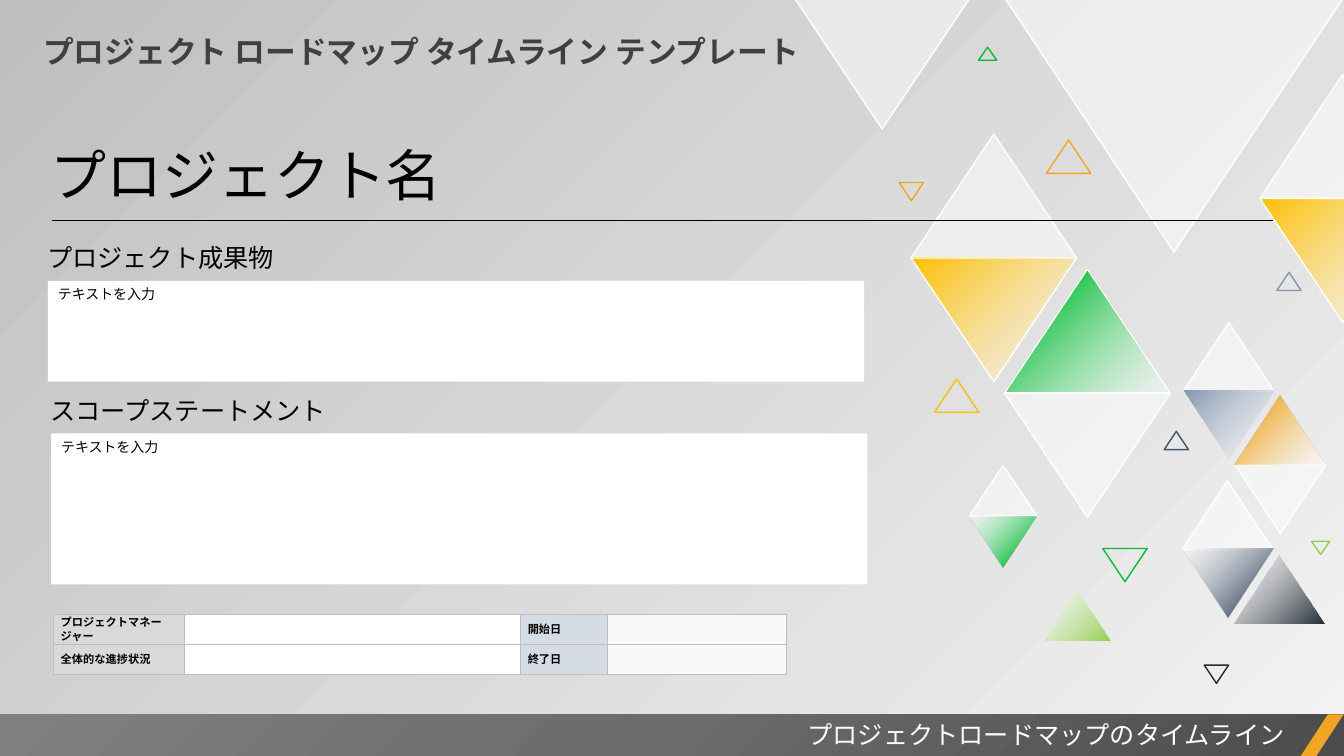
from dataclasses import dataclass

from pptx import Presentation
from pptx.dml.color import RGBColor as RGB
from pptx.enum.shapes import MSO_CONNECTOR as LINE, MSO_SHAPE as SHAPE
from pptx.enum.text import MSO_ANCHOR as ANCHOR, PP_ALIGN as ALIGN
from pptx.oxml import parse_xml
from pptx.oxml.ns import nsdecls, qn
from pptx.util import Cm, Pt


@dataclass(frozen=True)
class Theme:
    font: str = "TeX Gyre Adventor"
    white: str = "FFFFFF"
    black: str = "000000"
    heading: str = "404040"
    border: str = "BFBFBF"
    label: str = "D9D9D9"
    date_label: str = "D6DCE5"
    date: str = "F7F9FB"
    gold: str = "FFC000"
    orange: str = "F0A622"
    green: str = "00BD32"
    lime: str = "92D050"
    steel: str = "8497B0"
    slate: str = "44546A"
    navy: str = "222A35"
    heading_size: int = 22
    name_size: int = 40
    section_size: int = 18
    body_size: int = 10
    table_size: int = 8
    table_spacing: float = 0.85  # two label lines fit one row


def box(*lengths):
    return [Cm(v) for v in lengths]


def set_gradient(fill, element, stops, shade='<a:lin ang="13500000" scaled="0"/>'):
    """Stops are (position, colour, opacity in percent)."""
    fill.gradient()
    grad = next(element.iter(qn("a:gradFill")))
    for child in list(grad):
        grad.remove(child)
    gs = "".join(
        f'<a:gs pos="{pos * 1000}"><a:srgbClr val="{color}">'
        f'<a:alpha val="{opacity * 1000}"/></a:srgbClr></a:gs>'
        for pos, color, opacity in stops)
    grad.append(parse_xml(f'<a:gsLst {nsdecls("a")}>{gs}</a:gsLst>'))
    grad.append(parse_xml(shade.replace(" ", f' {nsdecls("a")} ', 1)))


class Deck:
    def __init__(self, s, theme):
        self.s, self.t = s, theme

    def background(self, stops):
        set_gradient(self.s.background.fill, self.s.element, stops)

    def run(self, p, text, size, color, bold=False):
        r = p.add_run()
        r.text = text
        r.font.name, r.font.size, r.font.bold = self.t.font, Pt(size), bold
        r.font.color.rgb = RGB.from_string(color)

    def text(self, at, text, size, color, bold=False, align=ALIGN.LEFT):
        tf = self.s.shapes.add_textbox(*box(*at)).text_frame
        tf.word_wrap = True
        tf.paragraphs[0].alignment = align
        self.run(tf.paragraphs[0], text, size, color, bold)

    def shape(self, kind, at, fill=None, line=None):
        sp = self.s.shapes.add_shape(kind, *box(*at))
        sp.shadow.inherit = False
        if fill:
            sp.fill.solid()
            sp.fill.fore_color.rgb = RGB.from_string(fill)
        else:
            sp.fill.background()
        if line:
            sp.line.color.rgb = RGB.from_string(line)
            sp.line.width = Pt(1)
        else:
            sp.line.fill.background()
        return sp

    def triangle(self, at, down=False, line=None, fill=None):
        sp = self.shape(SHAPE.ISOSCELES_TRIANGLE, at, fill, line)
        sp.rotation = 180 if down else 0
        return sp

    def pale_triangle(self, at, down=False):
        sp = self.triangle(at, down, self.t.white, self.t.white)
        color = next(sp.element.iter(qn("a:srgbClr")))
        color.append(parse_xml(f'<a:alpha {nsdecls("a")} val="50000"/>'))

    def shaded_triangle(self, at, down, color, color_first, line=None):
        sp = self.triangle(at, down, line)
        clear = self.t.white
        stops = ([(0, color, 100), (100, clear, 50)] if color_first
                 else [(0, clear, 50), (82, color, 100)])
        set_gradient(sp.fill, sp.element, stops)

    def footer_bar(self, left, top, right, bottom):
        fb = self.s.shapes.build_freeform(Cm(left), Cm(top))
        corners = [(right, top), (right, bottom), (left, bottom)]
        fb.add_line_segments([box(*c) for c in corners], close=True)
        sp = fb.convert_to_shape()
        sp.shadow.inherit = False
        set_gradient(
            sp.fill, sp.element,
            [(0, "4C4C4C", 100), (50, "6B6B6B", 100), (100, "808080", 100)],
            '<a:path path="circle"><a:fillToRect l="100000" t="100000"/></a:path>')
        sp.line.fill.background()

    def rule(self, x1, x2, y):
        c = self.s.shapes.add_connector(LINE.STRAIGHT, *box(x1, y, x2, y))
        c.line.color.rgb = RGB.from_string(self.t.black)
        c.line.width = Pt(0.5)
        c.element.spPr.append(parse_xml(f'<a:effectLst {nsdecls("a")}/>'))

    def section(self, left, top, title, height):
        t = self.t
        self.text((left, top, 7.75, 1.02), title, t.section_size, t.black)
        sp = self.shape(SHAPE.RECTANGLE, (left + 0.27, top + 1.09, 20.57, height), t.white)
        tf = sp.text_frame
        tf.word_wrap, tf.vertical_anchor = True, ANCHOR.TOP
        tf.paragraphs[0].alignment = ALIGN.LEFT
        self.run(tf.paragraphs[0], "テキストを入力", t.body_size, t.black)

    def table(self, left, top, widths, row_height, rows, fills):
        frame = self.s.shapes.add_table(
            len(rows), len(widths),
            *box(left, top, sum(widths), row_height * len(rows)))
        tbl = frame.table
        for column, width in zip(tbl.columns, widths):
            column.width = Cm(width)
        for i, row in enumerate(rows):
            tbl.rows[i].height = Cm(row_height)
            for j, text in enumerate(row):
                self.cell(tbl.cell(i, j), text, fills[j])

    def cell(self, cell, text, fill):
        cell.margin_left = cell.margin_right = Cm(0.18)
        cell.margin_top = cell.margin_bottom = 0
        cell.vertical_anchor = ANCHOR.MIDDLE
        p = cell.text_frame.paragraphs[0]
        p.line_spacing = self.t.table_spacing
        if text:
            self.run(p, text, self.t.table_size, self.t.black, True)
        else:
            p._p.get_or_add_endParaRPr().set("sz", str(self.t.table_size * 100))
        tc_pr = cell._tc.get_or_add_tcPr()
        for side in ("lnL", "lnR", "lnT", "lnB"):
            tc_pr.append(parse_xml(
                f'<a:{side} {nsdecls("a")} w="12700"><a:solidFill>'
                f'<a:srgbClr val="{self.t.border}"/></a:solidFill></a:{side}>'))
        cell.fill.solid()
        cell.fill.fore_color.rgb = RGB.from_string(fill)


def main():
    prs = Presentation()
    prs.slide_width, prs.slide_height = box(33.87, 19.05)
    t = Theme()
    d = Deck(prs.slides.add_slide(prs.slide_layouts[6]), t)
    d.background([(0, "F2F2F2", 40), (100, "BFBFBF", 100)])

    # Translucent triangles: left, top, size, pointing down
    big, mid, small = (4.17, 3.12), (2.29, 1.73), (1.7, 1.27)
    for x, y, size, down in [
            (22.96, 3.38, big, False), (25.32, 9.91, big, True),
            (25.32, -0.05, (8.53, 6.4), True), (29.79, 12.12, mid, False),
            (29.82, 8.13, mid, False), (31.12, 11.71, mid, True),
            (24.43, 11.73, small, False), (31.75, 1.88, big, False),
            (20.02, -0.05, (4.42, 3.3), True)]:
        d.pale_triangle((x, y, *size), down)

    # Shaded triangles: left, top, size, pointing down, colour, colour first, line
    for x, y, size, down, color, first, line in [
            (22.96, 6.5, big, True, t.gold, True, t.white),
            (25.32, 6.78, big, False, t.green, False, t.white),
            (31.09, 13.97, mid, False, t.navy, True, None),
            (29.79, 13.82, mid, True, t.slate, False, None),
            (29.82, 9.84, mid, True, t.steel, True, None),
            (31.12, 9.98, mid, False, t.orange, False, None),
            (26.29, 14.86, small, False, t.lime, True, None),
            (24.43, 13.02, small, True, t.green, False, None),
            (31.75, 5, big, True, t.gold, True, t.white)]:
        d.shaded_triangle((x, y, *size), down, color, first, line)

    # Outlined triangles
    wide, narrow, tiny = (1.12, 0.84), (0.61, 0.46), (0.46, 0.33)
    for x, y, size, down, color in [
            (27.79, 13.82, wide, True, t.green), (23.55, 9.55, wide, False, t.gold),
            (29.34, 10.87, narrow, False, t.slate), (30.35, 16.76, narrow, True, t.navy),
            (22.66, 4.6, narrow, True, t.orange), (32.18, 6.86, narrow, False, t.steel),
            (24.66, 1.19, tiny, False, t.green), (33.05, 13.64, tiny, True, t.lime),
            (26.37, 3.53, wide, False, t.orange)]:
        d.triangle((x, y, *size), down, color)

    # Heading and footer
    d.text((0.84, 0.71, 21.87, 1.19), "プロジェクト ロードマップ タイムライン テンプレート",
           t.heading_size, t.heading, True)
    d.footer_bar(0, 18, 33.87, 19.07)
    d.shape(SHAPE.PARALLELOGRAM, (32.77, 18, 1.09, 1.07), t.orange).adjustments[0] = 0.65
    d.text((13.32, 18, 19.3, 1.02), "プロジェクトロードマップのタイムライン",
           t.section_size, t.white, align=ALIGN.RIGHT)

    # Project name
    d.text((1.02, 3.42, 31.17, 1.96), "プロジェクト名", t.name_size, t.black)
    d.rule(1.32, 32.08, 5.55)

    # Status table
    d.table(1.35, 15.48, [3.3, 8.47, 2.18, 4.52], 0.76,
            [["プロジェクトマネージャー", "", "開始日", ""],
             ["全体的な進捗状況", "", "終了日", ""]],
            [t.label, t.white, t.date_label, t.date])

    # Deliverables and scope
    d.section(0.94, 5.99, "プロジェクト成果物", 2.54)
    d.section(1.02, 9.83, "スコープステートメント", 3.81)
    prs.save("out.pptx")


if __name__ == "__main__":
    main()
